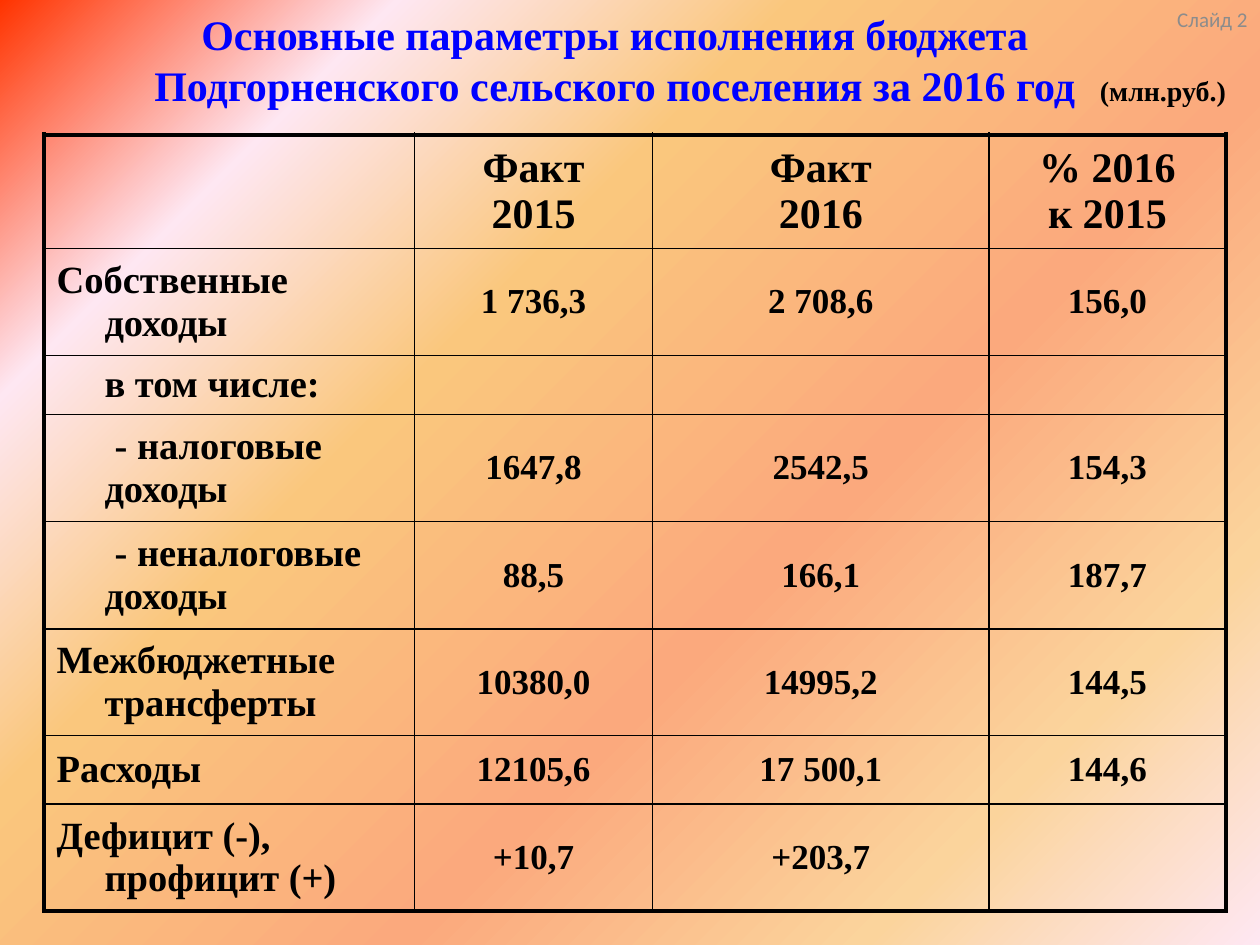
from dataclasses import dataclass

import lxml.etree
import pptx
import pptx.dml.color
import pptx.enum.text
import pptx.oxml.ns
import pptx.util

Inches = pptx.util.Inches
qn = pptx.oxml.ns.qn
ALIGN = pptx.enum.text.PP_ALIGN
ANCHOR = pptx.enum.text.MSO_ANCHOR


@dataclass(frozen=True)
class Theme:
    font: str = "Times New Roman"
    label_font: str = "Calibri"
    title_color: str = "0000FF"
    text_color: str = "000000"
    label_color: str = "8C8C8C"
    gradient: tuple = ((0, "FF3300"), (18, "FEE7F2"), (36, "FAC77D"),
                       (61, "FBA97D"), (82, "FBD49C"), (100, "FEE7F2"))
    heading: int = 24
    row_label: int = 22
    value: int = 20
    unit: int = 16
    page_label: int = 12
    outer_line: float = 3
    inner_line: float = 1
    thin_line: float = 0.5


THEME = Theme()
HANGING = 0.38
SPACE_WIDTH = 0.08

# Heading lines, each with the number of space widths it sits left of centre
HEADINGS = (
    (),
    (("Факт", 1), ("2015", 2)),
    (("Факт", 1), ("2016", 2)),
    (("% 2016", 1), ("к 2015", 3)),
)
# Row label, start of its first line, values
BUDGET = (
    ("Собственные доходы", 0, ("1 736,3", "2 708,6", "156,0")),
    ("в том числе:", HANGING, ("", "", "")),
    ("- налоговые доходы", 0.46, ("1647,8", "2542,5", "154,3")),
    ("- неналоговые доходы", 0.46, ("88,5", "166,1", "187,7")),
    ("Межбюджетные трансферты", 0, ("10380,0", "14995,2", "144,5")),
    ("Расходы", 0, ("12105,6", "17 500,1", "144,6")),
    ("Дефицит (-), профицит (+)", 0, ("+10,7", "+203,7", "")),
)
COLUMN_WIDTHS = (2.94, 1.89, 2.67, 1.88)
ROW_HEIGHTS = (0.72, 0.85, 0.47, 0.85, 0.85, 0.85, 0.54, 0.85)
THIN_RULES = (4, 6)


def write(paragraph, text, *, size, color=THEME.text_color, font=THEME.font,
          bold=True, align=ALIGN.CENTER, first_line=None):
    """Fill a paragraph; first_line is where a hanging paragraph's first line starts."""
    paragraph.text = text
    paragraph.alignment = align
    for run in paragraph.runs:
        run.font.size = pptx.util.Pt(size)
        run.font.name = font
        run.font.bold = bold
        run.font.color.rgb = pptx.dml.color.RGBColor.from_string(color)
    if first_line is not None:
        properties = paragraph._p.get_or_add_pPr()
        properties.set("marL", str(Inches(HANGING)))
        properties.set("indent", str(Inches(first_line - HANGING)))


def add_text(slide, box, text, *, anchor=ANCHOR.MIDDLE, wrap=True, **style):
    frame = slide.shapes.add_textbox(*map(Inches, box)).text_frame
    frame.word_wrap = wrap
    frame.vertical_anchor = anchor
    write(frame.paragraphs[0], text, **style)


def paint_background(slide):
    fill = slide.background.fill
    fill.gradient()
    fill.gradient_angle = 315
    stops = next(slide.element.iter(qn("a:gsLst")))
    for stop in list(stops):
        stops.remove(stop)
    for percent, color in THEME.gradient:
        stop = lxml.etree.SubElement(stops, qn("a:gs"), pos=str(percent * 1000))
        lxml.etree.SubElement(stop, qn("a:srgbClr"), val=color)


def add_header(slide, box):
    left, top, width, height = box
    add_text(slide, (left, top, 9.76, height),
             "Основные параметры исполнения бюджета\v"
             "Подгорненского сельского поселения за 2016 год",
             size=THEME.heading, color=THEME.title_color)
    add_text(slide, (left + width - 0.83, top, 0.83, 0.52), "Слайд 2",
             size=THEME.page_label, color=THEME.label_color, bold=False,
             font=THEME.label_font, align=ALIGN.RIGHT, anchor=ANCHOR.TOP)
    add_text(slide, (left + width - 1.38, top + 0.52, 1.22, 0.39), "(млн.руб.)",
             size=THEME.unit, wrap=False)


def rule_width(index, count):
    """Weight of the line at an edge of a grid with count rows or columns."""
    return THEME.outer_line if index in (0, count) else THEME.inner_line


def set_borders(cell, row, column):
    def row_rule(index):
        return THEME.thin_line if index in THIN_RULES else rule_width(index, len(ROW_HEIGHTS))

    columns = len(COLUMN_WIDTHS)
    widths = {"a:lnL": rule_width(column, columns),
              "a:lnR": rule_width(column + 1, columns),
              "a:lnT": row_rule(row),
              "a:lnB": row_rule(row + 1)}
    properties = cell._tc.get_or_add_tcPr()
    for tag, width in widths.items():
        line = lxml.etree.SubElement(properties, qn(tag), w=str(pptx.util.Pt(width)))
        fill = lxml.etree.SubElement(line, qn("a:solidFill"))
        lxml.etree.SubElement(fill, qn("a:srgbClr"), val=THEME.text_color)


def add_budget_table(slide, box):
    table = slide.shapes.add_table(len(ROW_HEIGHTS), len(COLUMN_WIDTHS),
                                   *map(Inches, box)).table
    table.first_row = table.horz_banding = False
    for column, width in zip(table.columns, COLUMN_WIDTHS):
        column.width = Inches(width)
    for row, height in zip(table.rows, ROW_HEIGHTS):
        row.height = Inches(height)

    for row in range(len(ROW_HEIGHTS)):
        for column in range(len(COLUMN_WIDTHS)):
            cell = table.cell(row, column)
            set_borders(cell, row, column)
            cell.fill.background()
            cell.vertical_anchor = ANCHOR.MIDDLE

    for column, lines in enumerate(HEADINGS):
        frame = table.cell(0, column).text_frame
        for number, (text, spaces) in enumerate(lines):
            paragraph = frame.add_paragraph() if number else frame.paragraphs[0]
            write(paragraph, text, size=THEME.heading, first_line=-spaces * SPACE_WIDTH)

    for row, (label, first_line, values) in enumerate(BUDGET, 1):
        write(table.cell(row, 0).text_frame.paragraphs[0], label,
              size=THEME.row_label, align=ALIGN.LEFT, first_line=first_line)
        for column, value in enumerate(values, 1):
            if value:
                write(table.cell(row, column).text_frame.paragraphs[0], value,
                      size=THEME.value)


def main():
    presentation = pptx.Presentation()
    presentation.slide_width, presentation.slide_height = Inches(10), Inches(7.5)
    slide = presentation.slides.add_slide(presentation.slide_layouts[6])
    paint_background(slide)
    add_header(slide, (0, 0, 10, 0.94))
    add_budget_table(slide, (0.35, 1.07, 9.37, 6.16))
    presentation.save("out.pptx")


if __name__ == "__main__":
    main()
